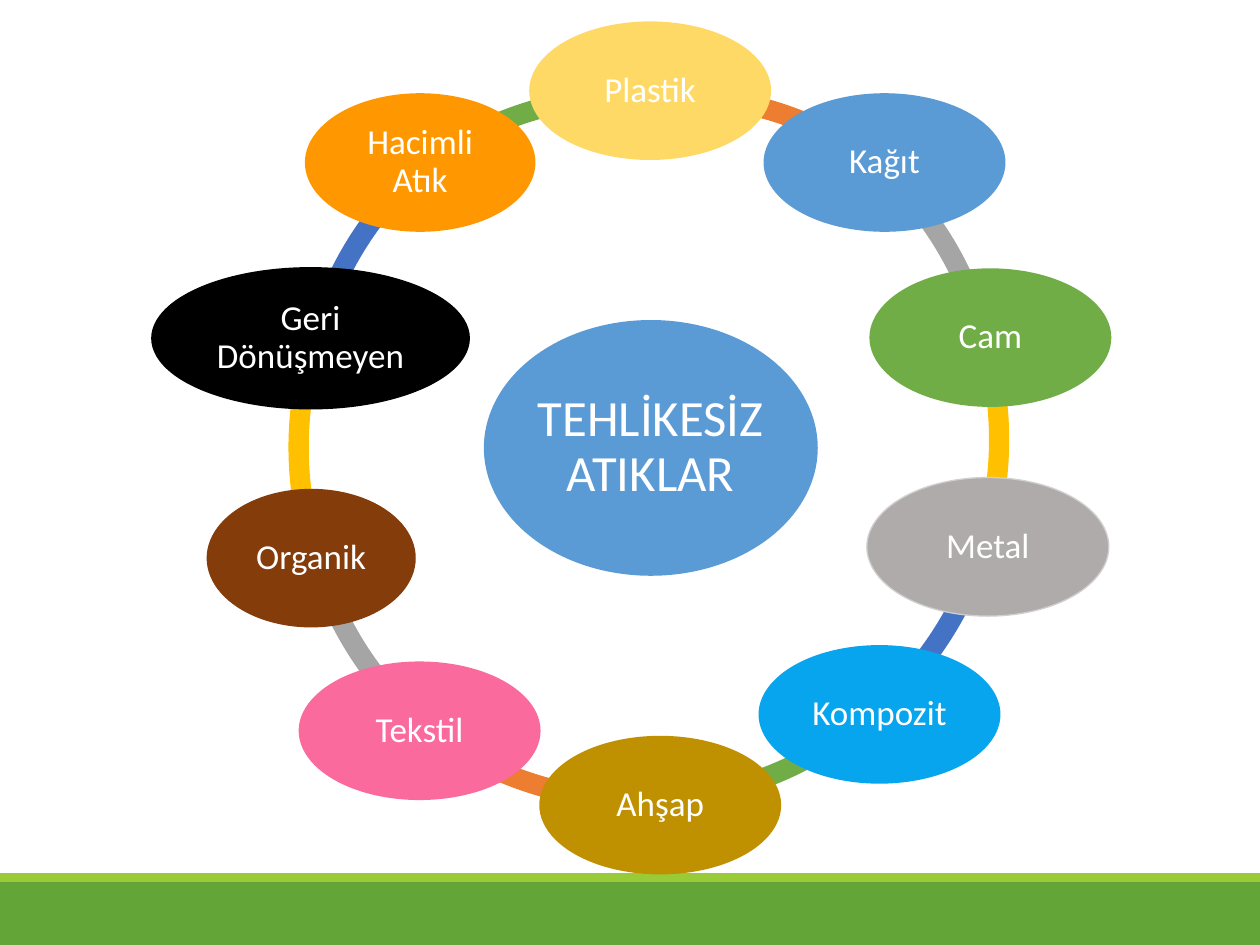
from pptx import Presentation
from pptx.dml.color import RGBColor
from pptx.enum.shapes import MSO_SHAPE
from pptx.enum.text import MSO_ANCHOR, PP_ALIGN
from pptx.util import Inches, Pt

RECT = MSO_SHAPE.RECTANGLE
OVAL = MSO_SHAPE.OVAL
ARC = MSO_SHAPE.BLOCK_ARC
MIDDLE = MSO_ANCHOR.MIDDLE
CENTER = PP_ALIGN.CENTER

FONT = "Calibri"
COLORS = {
    "white": "FFFFFF", "band": "63A537", "stripe": "99CB38",
    "green": "70AD47", "blue": "4472C4", "gold": "FFC000",
    "gray": "A5A5A5", "orange": "ED7D31", "sky": "5B9BD5",
    "plastic": "FFD966", "metal": "AFABAB", "rim": "D0CECE",
    "compound": "08A5EF", "wood": "BF9000", "textile": "FA6A9D",
    "organic": "843C0B", "black": "000000", "bulky": "FF9800",
}
RING = 5.74
THICK = 0.028
DEGREE = 0.6
WIDE, HIGH = 1.92, 1.1

ARCS = [
    (2.16, 0.68, 233.15, 272.6, "green"),
    (2.33, 0.54, 195.02, 228.71, "blue"),
    (2.29, 0.68, 162, 198, "gold"),
    (2.32, 0.79, 131.05, 164.26, "gray"),
    (2.2, 0.69, 86.61, 127.86, "orange"),
    (2.22, 0.69, 48.03, 86.93, "green"),
    (2.26, 0.66, 16.7, 49.11, "blue"),
    (2.27, 0.62, 343.44, 17.5, "gold"),
    (2.24, 0.51, 312.43, 345.7, "gray"),
    (2.45, 0.68, 266.86, 307.01, "orange"),
]
WASTES = [
    ("Plastik", 4.2, 0.17, WIDE, HIGH, "plastic"),
    ("Kağıt", 6.06, 0.74, WIDE, HIGH, "sky"),
    ("Cam", 6.9, 2.13, WIDE, HIGH, "green"),
    ("Metal", 6.88, 3.79, WIDE, HIGH, "metal"),
    ("Kompozit", 6.02, 5.12, WIDE, HIGH, "compound"),
    ("Ahşap", 4.28, 5.84, WIDE, HIGH, "wood"),
    ("Tekstil", 2.37, 5.25, WIDE, HIGH, "textile"),
    ("Organik", 1.64, 3.88, 1.66, HIGH, "organic"),
    ("Geri Dönüşmeyen", 1.2, 2.12, 2.53, 1.13, "black"),
    ("Hacimli Atık", 2.42, 0.74, 1.83, HIGH, "bulky"),
]


def color(name):
    return RGBColor.from_string(COLORS[name])


def add_shape(slide, kind, left, top, width, height, fill):
    shape = slide.shapes.add_shape(
        kind, Inches(left), Inches(top), Inches(width), Inches(height))
    shape.shadow.inherit = False
    shape.fill.solid()
    shape.fill.fore_color.rgb = color(fill)
    shape.line.fill.background()
    return shape


def add_arc(slide, left, top, start, end, fill):
    arc = add_shape(slide, ARC, left, top, RING, RING, fill)
    arc.adjustments[0] = start * DEGREE
    arc.adjustments[1] = end * DEGREE
    arc.adjustments[2] = THICK


def add_oval(slide, text, left, top, width, height, fill, size=20, inset=0.03):
    oval = add_shape(slide, OVAL, left, top, width, height, fill)
    frame = oval.text_frame
    frame.word_wrap = True
    frame.vertical_anchor = MIDDLE
    frame.margin_left = frame.margin_right = Inches(inset)
    frame.margin_top = frame.margin_bottom = Inches(inset)
    para = frame.paragraphs[0]
    para.alignment = CENTER
    para.line_spacing = 0.9
    run = para.add_run()
    run.text = text
    run.font.name = FONT
    run.font.size = Pt(size)
    run.font.color.rgb = color("white")
    return oval


def main():
    deck = Presentation()
    deck.slide_width, deck.slide_height = Inches(10), Inches(7.5)
    slide = deck.slides.add_slide(deck.slide_layouts[6])
    add_shape(slide, RECT, 0, 7, 10, 0.5, "band")
    add_shape(slide, RECT, 0, 6.93, 10, 0.07, "stripe")
    for arc in ARCS:
        add_arc(slide, *arc)
    add_oval(slide, "TEHLİKESİZ ATIKLAR", 3.84, 2.54, 2.65, 2.03, "sky",
             size=29, inset=0)
    for waste in WASTES:
        oval = add_oval(slide, *waste)
        if waste[0] == "Metal":
            oval.line.color.rgb = color("rim")
            oval.line.width = Pt(0.75)
    deck.save("out.pptx")


if __name__ == "__main__":
    main()
